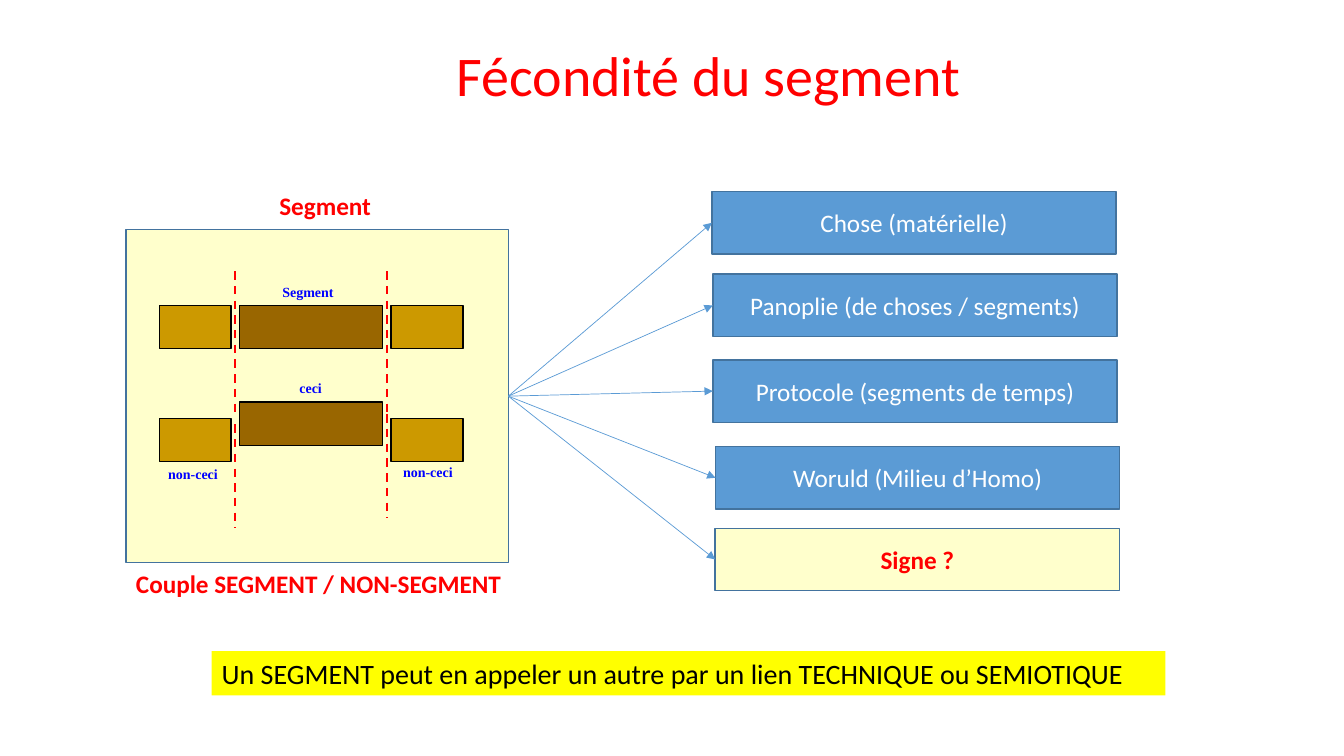
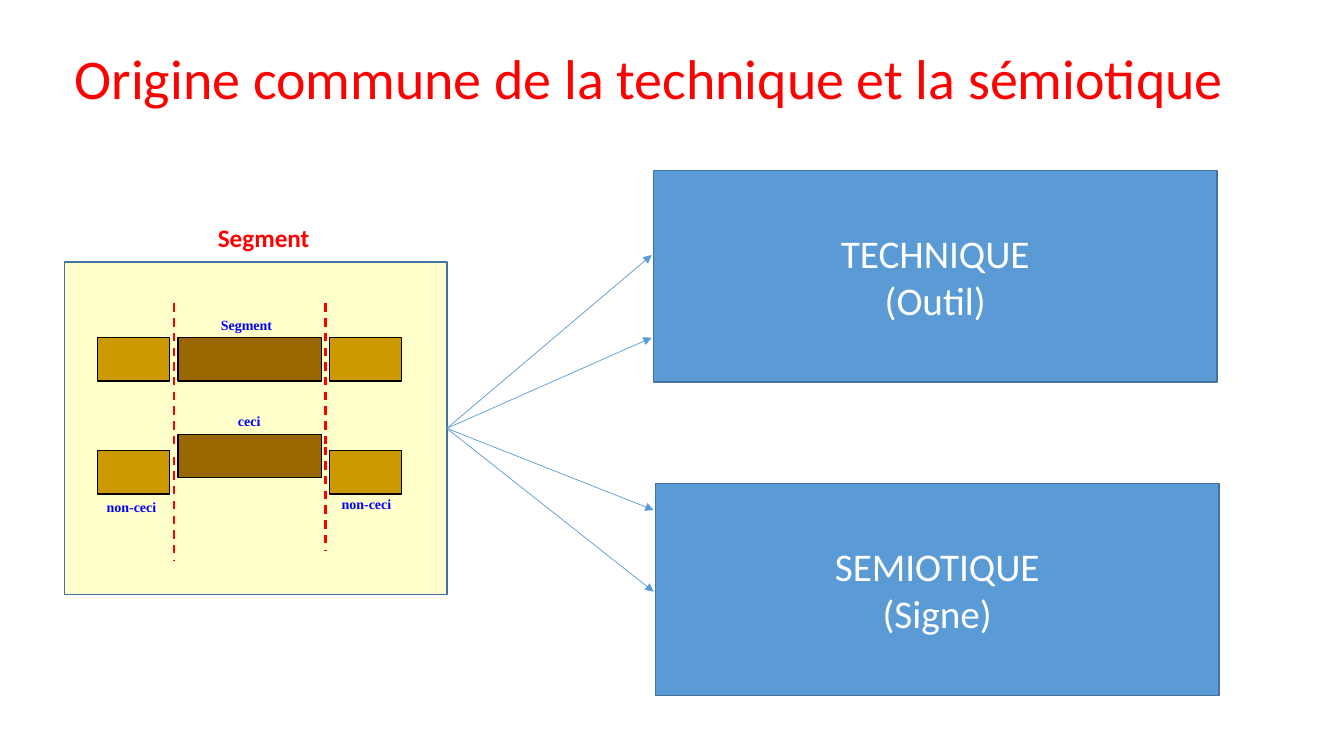
import lxml.etree
import pptx
import pptx.dml.color
import pptx.enum.dml
import pptx.enum.shapes
import pptx.enum.text
import pptx.oxml.ns
import pptx.util

SLIDE_WIDTH = pptx.util.Inches(13.33)
SLIDE_HEIGHT = pptx.util.Inches(7.5)
UNIT = SLIDE_HEIGHT / 45

RED, BLUE, BLACK, WHITE = "FF0000", "0000FF", "000000", "FFFFFF"
SKY, NAVY, CREAM, YELLOW = "5B9BD5", "43739E", "FFFFCC", "FFFF00"
OCHRE, BROWN = "CC9900", "996600"

ALIGN = pptx.enum.text.PP_ALIGN
ANCHOR = pptx.enum.text.MSO_ANCHOR


def style(size, color, bold=False, face="Calibri"):
    """Return the format values of a run of text."""
    return {"color": color,
            "font": {"size": pptx.util.Pt(size), "bold": bold, "name": face}}


TITLE = style(40, RED)
HEADING = style(18, RED, True)
MARK = style(10, BLUE, True, "Times New Roman")
ITEM = style(18, WHITE)
DOMAIN = style(28, WHITE)
MESSAGE = style(20, BLACK)

PANEL_WIDTH, PANEL_HEIGHT = 22.75, 19.8
BLOCK_HEIGHT, BLOCK_GAP = 2.58, 0.5
SIDE_WIDTH, MIDDLE_WIDTH = 4.27, 8.53


def rgb(color):
    """Turn a hex string into a colour."""
    return pptx.dml.color.RGBColor.from_string(color)


def grid(*cells):
    """Turn columns and rows into slide lengths."""
    return [pptx.util.Emu(round(cell * UNIT)) for cell in cells]


def write(frame, text, look, align=ALIGN.LEFT):
    """Fill a text frame with one paragraph per line of text."""
    frame.text = text
    for paragraph in frame.paragraphs:
        paragraph.alignment = align
        font = paragraph.runs[0].font
        font.color.rgb = rgb(look["color"])
        for name, value in look["font"].items():
            setattr(font, name, value)


def fit(frame):
    """Keep a text frame on one line and sized to its text."""
    values = {"word_wrap": False, "vertical_anchor": ANCHOR.TOP,
              "auto_size": pptx.enum.text.MSO_AUTO_SIZE.SHAPE_TO_FIT_TEXT}
    for name, value in values.items():
        setattr(frame, name, value)


def add_title_slide(deck, title, place):
    """Add a slide with its red title."""
    slide = deck.slides.add_slide(deck.slide_layouts[5])
    heading = slide.shapes.title
    for name, value in zip(("left", "top", "width", "height"), grid(*place)):
        setattr(heading, name, value)
    write(heading.text_frame, title, TITLE)
    fit(heading.text_frame)
    return slide


def add_box(slide, place, fill, outline, text="", look=ITEM):
    """Add an outlined rectangle with centred text."""
    box = slide.shapes.add_shape(
        pptx.enum.shapes.MSO_SHAPE.RECTANGLE, *grid(*place))
    box.shadow.inherit = False
    box.fill.solid()
    box.fill.fore_color.rgb = rgb(fill)
    box.line.color.rgb = rgb(outline)
    box.line.width = pptx.util.Pt(1)
    if text:
        box.text_frame.vertical_anchor = ANCHOR.MIDDLE
        write(box.text_frame, text, look, ALIGN.CENTER)


def add_label(slide, place, text, look, fill=None):
    """Add a line of text, on a coloured band if a fill is given."""
    label = slide.shapes.add_textbox(*grid(*place))
    if fill:
        label.fill.solid()
        label.fill.fore_color.rgb = rgb(fill)
    write(label.text_frame, text, look)
    fit(label.text_frame)


def add_line(slide, start, end, color, width):
    """Add a straight line without shadow."""
    line = slide.shapes.add_connector(
        pptx.enum.shapes.MSO_CONNECTOR.STRAIGHT, *grid(*start, *end))
    line.line.color.rgb = rgb(color)
    line.line.width = pptx.util.Pt(width)
    lxml.etree.SubElement(line._element.spPr, pptx.oxml.ns.qn("a:effectLst"))
    return line


def add_cut(slide, column, top, bottom):
    """Add a dashed vertical cut."""
    cut = add_line(slide, (column, top), (column, bottom), RED, 1.5)
    cut.line.dash_style = pptx.enum.dml.MSO_LINE.DASH


def add_arrow(slide, start, end):
    """Add a thin arrow."""
    arrow = add_line(slide, start, end, SKY, 0.5)
    outline = arrow._element.spPr.find(pptx.oxml.ns.qn("a:ln"))
    lxml.etree.SubElement(
        outline, pptx.oxml.ns.qn("a:tailEnd"), type="triangle")


def add_segment_panel(slide, left, top):
    """Add the segment diagram and return the point its arrows leave from."""
    add_box(slide, (left, top, PANEL_WIDTH, PANEL_HEIGHT), CREAM, NAVY)
    for side_row, middle_row in ((4.5, 4.5), (11.22, 10.25)):
        column = left + 1.98
        for width, row, fill in ((SIDE_WIDTH, side_row, OCHRE),
                                 (MIDDLE_WIDTH, middle_row, BROWN),
                                 (SIDE_WIDTH, side_row, OCHRE)):
            add_box(slide, (column, top + row, width, BLOCK_HEIGHT),
                    fill, BLACK)
            column += width + BLOCK_GAP
    left_cut = left + 1.98 + SIDE_WIDTH + BLOCK_GAP / 2
    right_cut = left_cut + MIDDLE_WIDTH + BLOCK_GAP
    for column, first, last in ((left_cut, 2.46, 10.98),
                                (right_cut, 2.46, 10.98),
                                (left_cut, 11.58, 17.73),
                                (right_cut, 10.98, 17.13)):
        add_cut(slide, column, top + first, top + last)
    for text, column, row, width in (("Segment", 8.72, 2.93, 4.8),
                                     ("ceci", 9.73, 8.64, 2.6),
                                     ("non-ceci", 1.92, 13.75, 4.2),
                                     ("non-ceci", 15.9, 13.62, 4.2)):
        add_label(slide, (left + column, top + row, width, 1.62), text, MARK)
    add_label(slide, (left + 8.53, top - 2.64, 6.72, 2.4), "Segment", HEADING)
    return left + PANEL_WIDTH, top + PANEL_HEIGHT / 2


def add_fertility_slide(deck):
    """Add the slide on what a segment gives rise to."""
    slide = add_title_slide(
        deck, "Fécondité du segment", (26.58, 2.1, 31.44, 4.62))
    origin = add_segment_panel(slide, 7.5, 13.68)
    width, height = 24.06, 3.72
    for text, left, top, fill, look in (
            ("Chose (matérielle)", 42.36, 11.4, SKY, ITEM),
            ("Panoplie (de choses / segments)", 42.42, 16.32, SKY, ITEM),
            ("Protocole (segments de temps)", 42.42, 21.42, SKY, ITEM),
            ("Woruld (Milieu d’Homo)", 42.58, 26.58, SKY, ITEM),
            ("Signe ?", 42.56, 31.44, CREAM, HEADING)):
        add_box(slide, (left, top, width, height), fill, NAVY, text, look)
        add_arrow(slide, origin, (left, top + height / 2))
    add_label(slide, (12.6, 38.76, 56.76, 2.64),
              "Un SEGMENT peut en appeler un autre par un lien "
              "TECHNIQUE ou SEMIOTIQUE", MESSAGE, YELLOW)
    add_label(slide, (7.5, 33.54, 23.16, 2.4),
              "Couple SEGMENT / NON-SEGMENT", HEADING, WHITE)


def add_origin_slide(deck):
    """Add the slide on the common origin of technique and semiotics."""
    slide = add_title_slide(
        deck, "Origine commune de la technique et la sémiotique",
        (3.84, 2.28, 71.34, 4.62))
    origin = add_segment_panel(slide, 3.84, 15.6)
    for text, left, top, targets in (
            ("TECHNIQUE\n(Outil)", 38.88, 10.14, (15.18, 20.1)),
            ("SEMIOTIQUE\n(Signe)", 39, 28.8, (30.36, 35.22))):
        for row in targets:
            add_arrow(slide, origin, (left - 0.1, row))
        add_box(slide, (left, top, 33.54, 12.6), SKY, NAVY, text, DOMAIN)


def main():
    """Build and save the presentation."""
    deck = pptx.Presentation()
    deck.slide_width, deck.slide_height = SLIDE_WIDTH, SLIDE_HEIGHT
    add_fertility_slide(deck)
    add_origin_slide(deck)
    deck.save("out.pptx")


if __name__ == "__main__":
    main()
